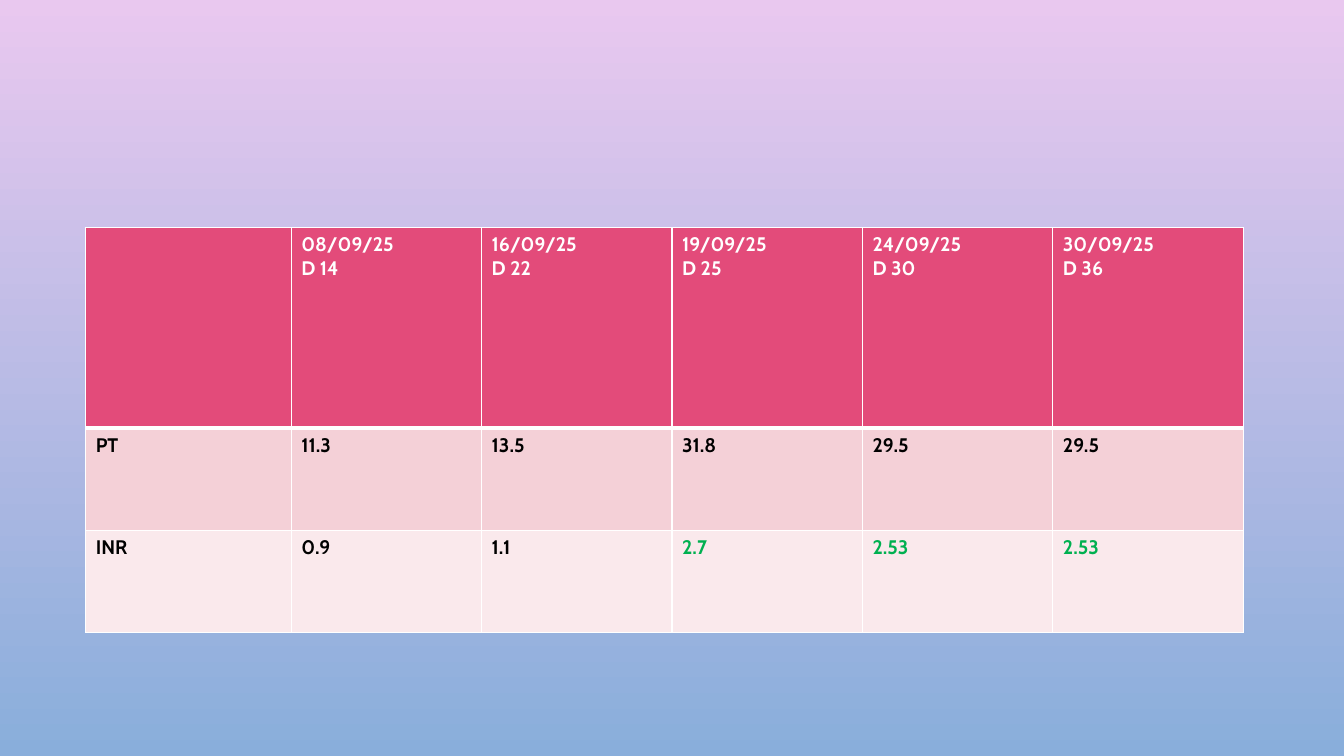
from lxml import etree
from pptx import Presentation
from pptx.dml.color import RGBColor as RGB
from pptx.oxml.ns import qn
from pptx.util import Cm, Pt

PINK = RGB(0xE9, 0xC8, 0xEF)
BLUE = RGB(0x89, 0xAE, 0xDB)
ROSE = RGB(0xE3, 0x4B, 0x7A)
BLUSH = RGB(0xF4, 0xD0, 0xD7)
PALE = RGB(0xFA, 0xE9, 0xEC)
WHITE = RGB(0xFF, 0xFF, 0xFF)
BLACK = RGB(0, 0, 0)
GREEN = RGB(0x00, 0xB0, 0x50)

HEAD = ["", "08/09/25\nD 14", "16/09/25\nD 22", "19/09/25\nD 25",
        "24/09/25\nD 30", "30/09/25\nD 36"]
TIMES = ["PT", "11.3", "13.5", "31.8", "29.5", "29.5"]
RATIOS = ["INR", "0.9", "1.1", "2.7", "2.53", "2.53"]


def write(frame, text, size=14, color=BLACK, bold=True, face="Cabin"):
    frame.text = text
    for para in frame.paragraphs:
        font = para.font
        font.size, font.bold, font.name = Pt(size), bold, face
        font.color.rgb = color
        for run in para.runs:
            run.font.size, run.font.bold, run.font.name = Pt(size), bold, face
            run.font.color.rgb = color


def edge(cell, top, base):
    """Draw white borders; top and base are widths in points."""
    props = cell._tc.get_or_add_tcPr()
    sides = {"lnL": 1, "lnR": 1, "lnT": top, "lnB": base}
    for spot, (side, width) in enumerate(sides.items()):
        line = etree.Element(qn("a:" + side), w=str(Pt(width)))
        fill = etree.SubElement(line, qn("a:solidFill"))
        etree.SubElement(fill, qn("a:srgbClr"), val=str(WHITE))
        props.insert(spot, line)


def backdrop(slide):
    fill = slide.background.fill
    fill.gradient()
    fill.gradient_angle = 270
    for stop, color in zip(fill.gradient_stops, (PINK, BLUE)):
        stop.color.rgb = color


def results(slide, left, top, width, height):
    rows = [(HEAD, ROSE), (TIMES, BLUSH), (RATIOS, PALE)]
    grid = slide.shapes.add_table(len(rows), len(HEAD), left, top,
                                  width, height).table

    # The label column is wider; the header is about twice a body row
    first = Cm(5.18)
    for n, col in enumerate(grid.columns):
        col.width = first if n == 0 else (width - first) // (len(HEAD) - 1)
    deep = Cm(5.06)
    for n, row in enumerate(grid.rows):
        row.height = deep if n == 0 else (height - deep) // (len(rows) - 1)

    # Cells
    for r, (words, shade) in enumerate(rows):
        for c, text in enumerate(words):
            cell = grid.cell(r, c)
            cell.fill.solid()
            cell.fill.fore_color.rgb = shade
            edge(cell, top=3 if r == 1 else 1, base=3 if r == 0 else 1)
            high = r == 2 and c >= 3
            color = WHITE if r == 0 else GREEN if high else BLACK
            write(cell.text_frame, text, color=color)


def main():
    deck = Presentation()
    deck.slide_width, deck.slide_height = Cm(33.87), Cm(19.05)
    slide = deck.slides.add_slide(deck.slide_layouts[6])
    backdrop(slide)
    results(slide, Cm(2.16), Cm(5.73), Cm(29.17), Cm(10.2))
    deck.save("out.pptx")


if __name__ == "__main__":
    main()
